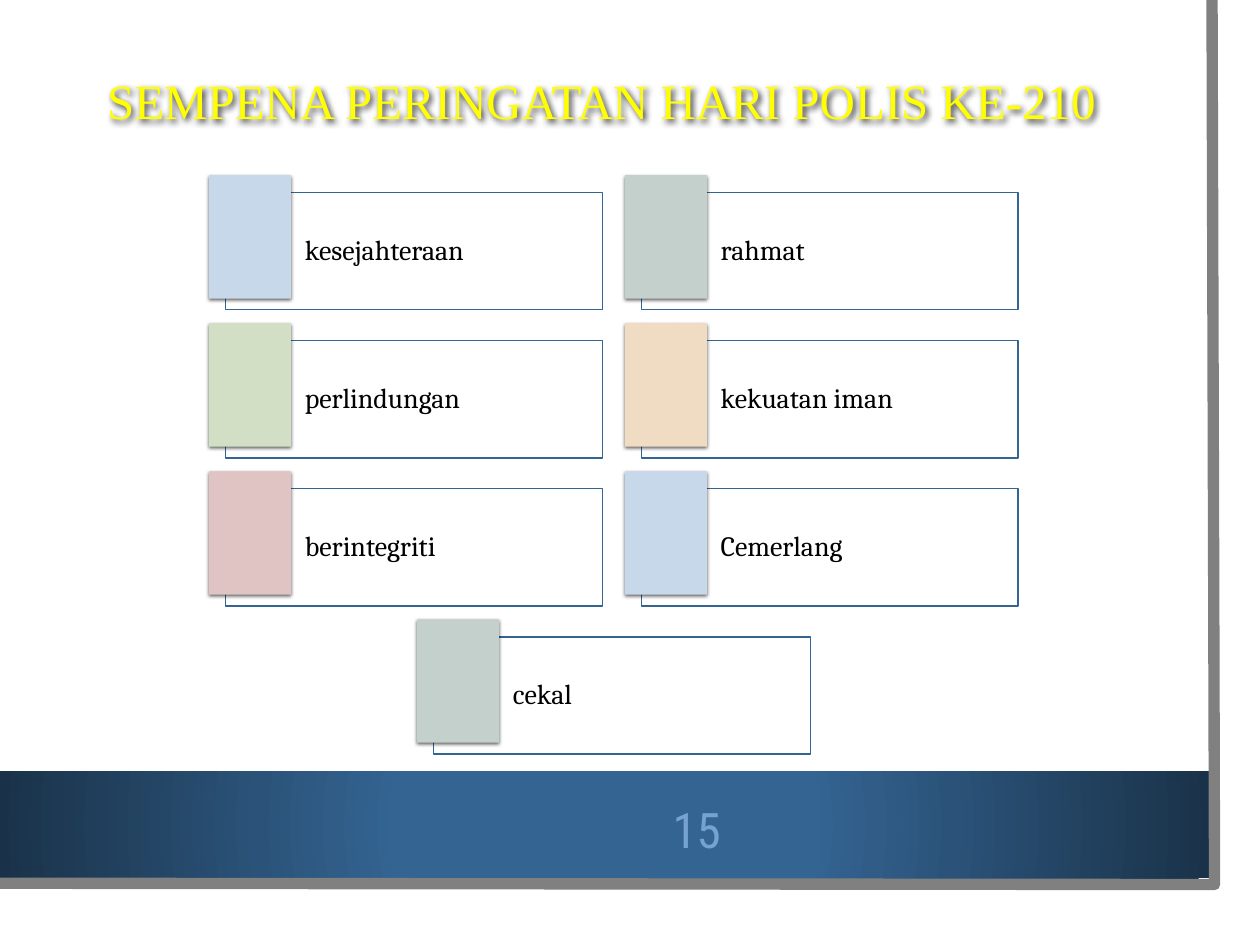
from lxml.etree import SubElement
from pptx import Presentation
from pptx.dml.color import RGBColor
from pptx.enum.shapes import MSO_SHAPE
from pptx.enum.text import MSO_ANCHOR, PP_ALIGN
from pptx.oxml import parse_xml
from pptx.oxml.ns import nsdecls, qn
from pptx.util import Inches, Pt

COLORS = {
    "white": "FFFFFF",
    "black": "000000",
    "yellow": "FFFF00",
    "edge": "808080",
    "navy": "346492",
    "dark_navy": "1A3249",
    "page_number": "75A2CE",
    "blue": "C8D8EB",
    "sage": "C3D0CB",
    "green": "D2DFC4",
    "sand": "EFDCC2",
    "rose": "E0C3C3",
}

VALUES = [
    ("kesejahteraan", "blue"),
    ("rahmat", "sage"),
    ("perlindungan", "green"),
    ("kekuatan iman", "sand"),
    ("berintegriti", "rose"),
    ("Cemerlang", "blue"),
    ("cekal", "sage"),
]
COLUMNS = 2
GRID_LEFT, GRID_TOP = 1.66, 1.39
COLUMN_STEP, ROW_STEP = 3.3, 1.175
CARD_WIDTH, CARD_HEIGHT = 2.99, 0.93
TAB_WIDTH, TAB_HEIGHT = 0.65, 0.98
CARD_OFFSET_X, CARD_OFFSET_Y = 0.13, 0.14


def rgb(name):
    return RGBColor.from_string(COLORS[name])


def write_text(shape, text, *, font, size, color, align=PP_ALIGN.LEFT,
               wrap=True, insets=(0.1, 0.05, 0.1, 0.05), line_spacing=1.0):
    frame = shape.text_frame
    frame.word_wrap = wrap
    frame.vertical_anchor = MSO_ANCHOR.MIDDLE
    frame.margin_left, frame.margin_top, frame.margin_right, frame.margin_bottom = map(Inches, insets)
    paragraph = frame.paragraphs[0]
    paragraph.alignment = align
    paragraph.line_spacing = line_spacing
    run = paragraph.add_run()
    run.text = text
    run.font.name = font
    run.font.size = Pt(size)
    run.font.color.rgb = rgb(color)


def add_rectangle(slide, left, top, width, height, fill, line=None):
    rectangle = slide.shapes.add_shape(
        MSO_SHAPE.RECTANGLE, Inches(left), Inches(top), Inches(width), Inches(height))
    rectangle.shadow.inherit = False
    rectangle.fill.solid()
    rectangle.fill.fore_color.rgb = rgb(fill)
    if line:
        rectangle.line.color.rgb = rgb(line)
        rectangle.line.width = Pt(0.75)
    else:
        rectangle.line.fill.background()
    return rectangle


def set_shadow(shape, blur, distance, angle, opacity):
    shape.shadow.inherit = False
    effects = shape.element.spPr.find(qn("a:effectLst"))
    effects.append(parse_xml(
        f'<a:outerShdw {nsdecls("a")} blurRad="{Pt(blur)}" dist="{Pt(distance)}" '
        f'dir="{angle * 60000}" algn="ctr" rotWithShape="0">'
        f'<a:srgbClr val="{COLORS["black"]}"><a:alpha val="{opacity * 1000}"/></a:srgbClr>'
        '</a:outerShdw>'))


def set_opacity(shape, percent):
    color = shape.element.spPr.find(qn("a:solidFill")).find(qn("a:srgbClr"))
    SubElement(color, qn("a:alpha"), val=str(percent * 1000))


def set_radial_fill(shape, inner, outer):
    properties = shape.element.spPr
    solid = properties.find(qn("a:solidFill"))
    properties.replace(solid, parse_xml(
        f'<a:gradFill {nsdecls("a")} rotWithShape="1"><a:gsLst>'
        f'<a:gs pos="34000"><a:srgbClr val="{COLORS[inner]}"/></a:gs>'
        f'<a:gs pos="100000"><a:srgbClr val="{COLORS[outer]}"/></a:gs>'
        '</a:gsLst><a:path path="circle">'
        '<a:fillToRect l="50000" t="50000" r="50000" b="50000"/></a:path></a:gradFill>'))


def add_page_edge(slide):
    builder = slide.shapes.build_freeform(Inches(9.62), 0)
    builder.add_line_segments(
        [(Inches(9.64), Inches(7.02)), (Inches(-0.02), Inches(7.01))], close=False)
    edge = builder.convert_to_shape()
    edge.shadow.inherit = False
    edge.fill.background()
    edge.line.color.rgb = rgb("edge")
    edge.line.width = Pt(6.5)


def add_backdrop(slide):
    add_rectangle(slide, 0, 0, 9.83, 7.27, "white")
    band = add_rectangle(slide, 0, 6.12, 9.6, 0.85, "navy")
    set_radial_fill(band, "navy", "dark_navy")
    add_page_edge(slide)
    page_number = slide.shapes.add_textbox(Inches(5.16), Inches(6.3), Inches(0.74), Inches(0.55))
    write_text(page_number, "15", font="Roboto Condensed", size=28,
               color="page_number", align=PP_ALIGN.CENTER)


def add_value_card(slide, left, top, text, color):
    card = add_rectangle(slide, left + CARD_OFFSET_X, top + CARD_OFFSET_Y,
                         CARD_WIDTH, CARD_HEIGHT, "white", line="navy")
    set_opacity(card, 40)
    write_text(card, text, font="Cambria", size=16, color="black",
               insets=(0.63, 0.07, 0.07, 0.07), line_spacing=0.9)
    tab = add_rectangle(slide, left, top, TAB_WIDTH, TAB_HEIGHT, color)
    set_shadow(tab, blur=2, distance=1, angle=90, opacity=60)


def add_value_grid(slide):
    for index, (text, color) in enumerate(VALUES):
        row, column = divmod(index, COLUMNS)
        cards_in_row = min(COLUMNS, len(VALUES) - row * COLUMNS)
        centering = (COLUMNS - cards_in_row) / 2
        add_value_card(slide, GRID_LEFT + (column + centering) * COLUMN_STEP,
                       GRID_TOP + row * ROW_STEP, text, color)


def add_title(slide):
    title = slide.shapes.title
    title.left, title.top, title.width, title.height = map(Inches, (0.75, 0.51, 8.14, 0.57))
    write_text(title, "SEMPENA PERINGATAN HARI POLIS KE-210",
               font="Times New Roman", size=28, color="yellow", wrap=False)
    set_shadow(title, blur=4, distance=1.5, angle=45, opacity=80)
    slide.shapes.element.append(title.element)


def main():
    presentation = Presentation()
    presentation.slide_width = Inches(10)
    presentation.slide_height = Inches(7.5)
    slide = presentation.slides.add_slide(presentation.slide_layouts[5])
    add_backdrop(slide)
    add_value_grid(slide)
    add_title(slide)
    presentation.save("out.pptx")


if __name__ == "__main__":
    main()
